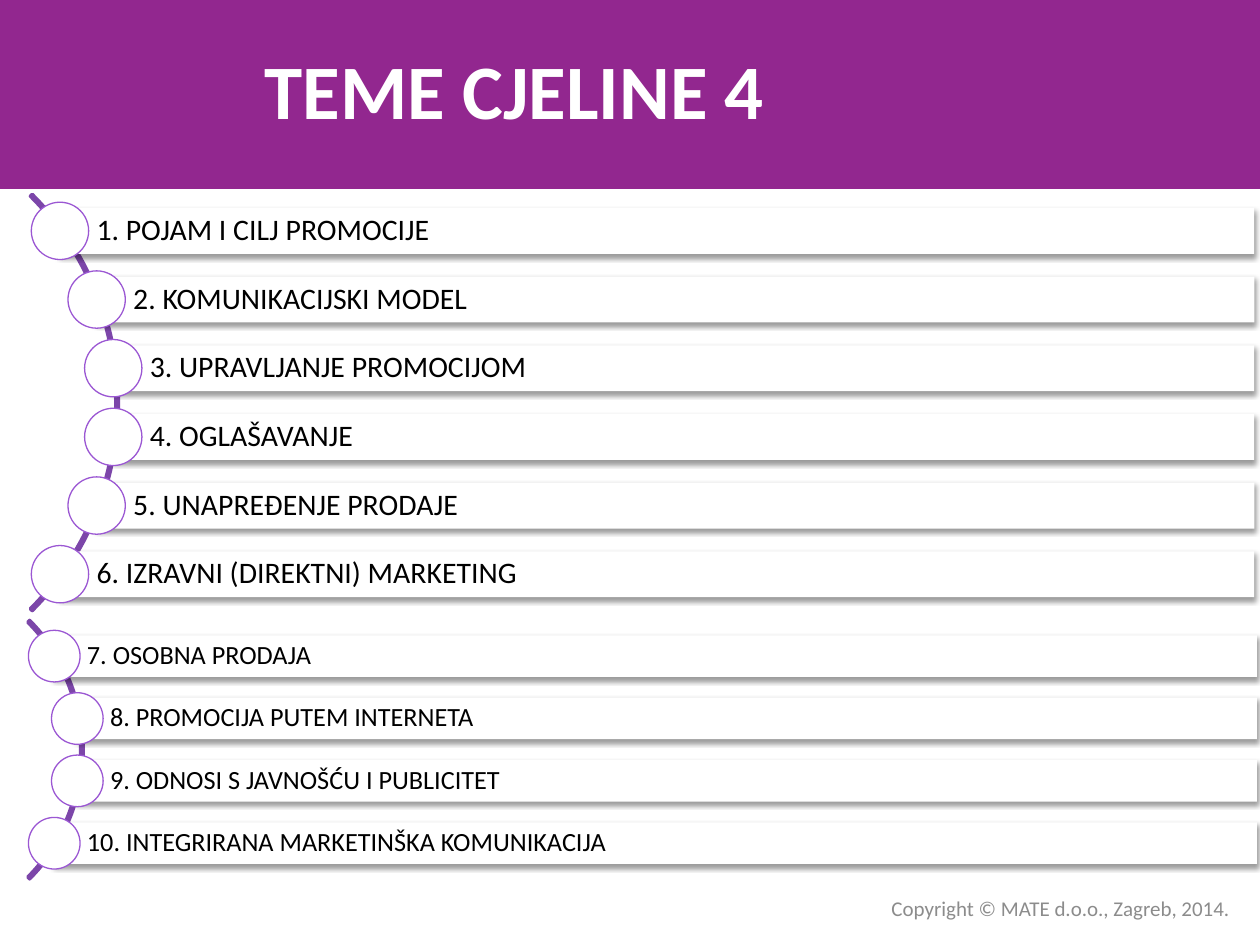
from dataclasses import dataclass
from math import sqrt

from lxml.etree import SubElement
from pptx import Presentation
from pptx.dml.color import RGBColor
from pptx.enum.shapes import MSO_SHAPE as Preset
from pptx.enum.text import MSO_ANCHOR as Anchor, MSO_AUTO_SIZE as AutoSize, PP_ALIGN as Align
from pptx.oxml.ns import qn
from pptx.shapes.autoshape import Shape
from pptx.shapes.group import GroupShape
from pptx.slide import Slide
from pptx.text.text import TextFrame
from pptx.util import Inches, Pt

FONT = "Calibri"
COLORS = {
    "band": "92278F",
    "arc": "7C46A9",
    "circle": "9B57D3",
    "white": "FFFFFF",
    "text": "000000",
    "copyright": "8C8C8C",
}
COLUMNS, ROWS = 20, 15
CELL = Inches(0.5)
ARC_INSET = 0.05


@dataclass
class TopicList:
    """Topics along an arc; lengths are in grid cells, text size in points."""
    topics: list[str]
    center_column: float
    center_row: float
    radius: float
    pitch: float
    bar_height: float
    bar_right: float
    circle_size: float
    indent: float
    margin: float
    text_size: int


TOPIC_LISTS = [
    TopicList(
        ["1. POJAM I CILJ PROMOCIJE", "2. KOMUNIKACIJSKI MODEL",
         "3. UPRAVLJANJE PROMOCIJOM", "4. OGLAŠAVANJE",
         "5. UNAPREĐENJE PRODAJE", "6. IZRAVNI (DIREKTNI) MARKETING"],
        center_column=-2.79, center_row=6.39, radius=4.67, pitch=1.09,
        bar_height=0.73, bar_right=19.91, circle_size=0.91,
        indent=0.58, margin=0.1, text_size=17),
    TopicList(
        ["7. OSOBNA PRODAJA", "8. PROMOCIJA PUTEM INTERNETA",
         "9. ODNOSI S JAVNOŠĆU I PUBLICITET",
         "10. INTEGRIRANA MARKETINŠKA KOMUNIKACIJA"],
        center_column=-1.58, center_row=11.9, radius=2.9, pitch=0.99,
        bar_height=0.66, bar_right=19.95, circle_size=0.82,
        indent=0.52, margin=0.08, text_size=15),
]


def cells(count: float) -> int:
    return round(count * CELL)


def color(name: str) -> RGBColor:
    return RGBColor.from_string(COLORS[name])


def add_preset(parent: Slide | GroupShape, preset: Preset, left: float, top: float,
               width: float, height: float, fill: str | None = None,
               line: str | None = None, line_width: float = 1) -> Shape:
    shape = parent.shapes.add_shape(preset, *map(cells, (left, top, width, height)))
    shape.shadow.inherit = False
    if fill:
        shape.fill.solid()
        shape.fill.fore_color.rgb = color(fill)
    else:
        shape.fill.background()
    if line:
        shape.line.color.rgb = color(line)
        shape.line.width = Pt(line_width)
    else:
        shape.line.fill.background()
    return shape


def write_text(frame: TextFrame, text: str, size: int, color_name: str,
               alignment: Align, bold: bool = False) -> None:
    frame.word_wrap = True
    frame.auto_size = AutoSize.NONE
    frame.vertical_anchor = Anchor.MIDDLE
    frame.text = text
    paragraph = frame.paragraphs[0]
    paragraph.alignment = alignment
    font = paragraph.font
    font.name, font.size, font.bold = FONT, Pt(size), bold
    font.color.rgb = color(color_name)


def add_soft_shadow(shape: Shape) -> None:
    effects = shape.element.spPr.find(qn("a:effectLst"))
    shadow = SubElement(effects, qn("a:outerShdw"), blurRad="40000", dist="20000",
                        dir="5400000", rotWithShape="0")
    tint = SubElement(shadow, qn("a:srgbClr"), val=COLORS["text"])
    SubElement(tint, qn("a:alpha"), val="38000")


def add_topic(group: GroupShape, topics: TopicList, text: str, offset: float) -> None:
    """Draw one bar and its circle, offset in rows from the arc's middle."""
    column = topics.center_column - ARC_INSET + sqrt(topics.radius ** 2 - offset ** 2)
    row = topics.center_row + offset
    bar = add_preset(group, Preset.RECTANGLE, column, row - topics.bar_height / 2,
                     topics.bar_right - column, topics.bar_height, "white")
    add_soft_shadow(bar)
    frame = bar.text_frame
    frame.margin_left = cells(topics.indent)
    frame.margin_top = frame.margin_right = frame.margin_bottom = cells(topics.margin)
    write_text(frame, text, topics.text_size, "text", Align.LEFT)
    frame.paragraphs[0].line_spacing = 0.9
    size = topics.circle_size
    add_preset(group, Preset.OVAL, column - size / 2, row - size / 2, size, size,
               "white", "circle", 0.75)


def add_topic_list(slide: Slide, topics: TopicList) -> None:
    group = slide.shapes.add_group_shape()
    radius = topics.radius
    arc = add_preset(group, Preset.BLOCK_ARC, topics.center_column - radius,
                     topics.center_row - radius, 2 * radius, 2 * radius,
                     line="arc", line_width=2)
    for index, value in enumerate((189, 27, 0.02 / radius)):
        arc.adjustments[index] = value
    middle = (len(topics.topics) - 1) / 2
    for index, text in enumerate(topics.topics):
        add_topic(group, topics, text, (index - middle) * topics.pitch)


def add_heading(slide: Slide) -> None:
    band = add_preset(slide, Preset.RECTANGLE, 0, 0, COLUMNS, 3, "band")
    title = slide.shapes.title
    title.element.addprevious(band.element)
    title.left, title.top, title.width, title.height = map(cells, (0, 0.16, 16.34, 2.5))
    write_text(title.text_frame, "TEME CJELINE 4", 44, "white", Align.CENTER, bold=True)


def add_copyright(slide: Slide) -> None:
    box = slide.shapes.add_textbox(*map(cells, (9.38, 14.12, 10.34, 0.6)))
    write_text(box.text_frame, "Copyright © MATE d.o.o., Zagreb, 2014.", 12,
               "copyright", Align.RIGHT)


def main() -> None:
    presentation = Presentation()
    presentation.slide_width = cells(COLUMNS)
    presentation.slide_height = cells(ROWS)
    slide = presentation.slides.add_slide(presentation.slide_layouts.get_by_name("Title Only"))
    add_heading(slide)
    for topics in TOPIC_LISTS:
        add_topic_list(slide, topics)
    add_copyright(slide)
    presentation.save("out.pptx")


if __name__ == "__main__":
    main()
